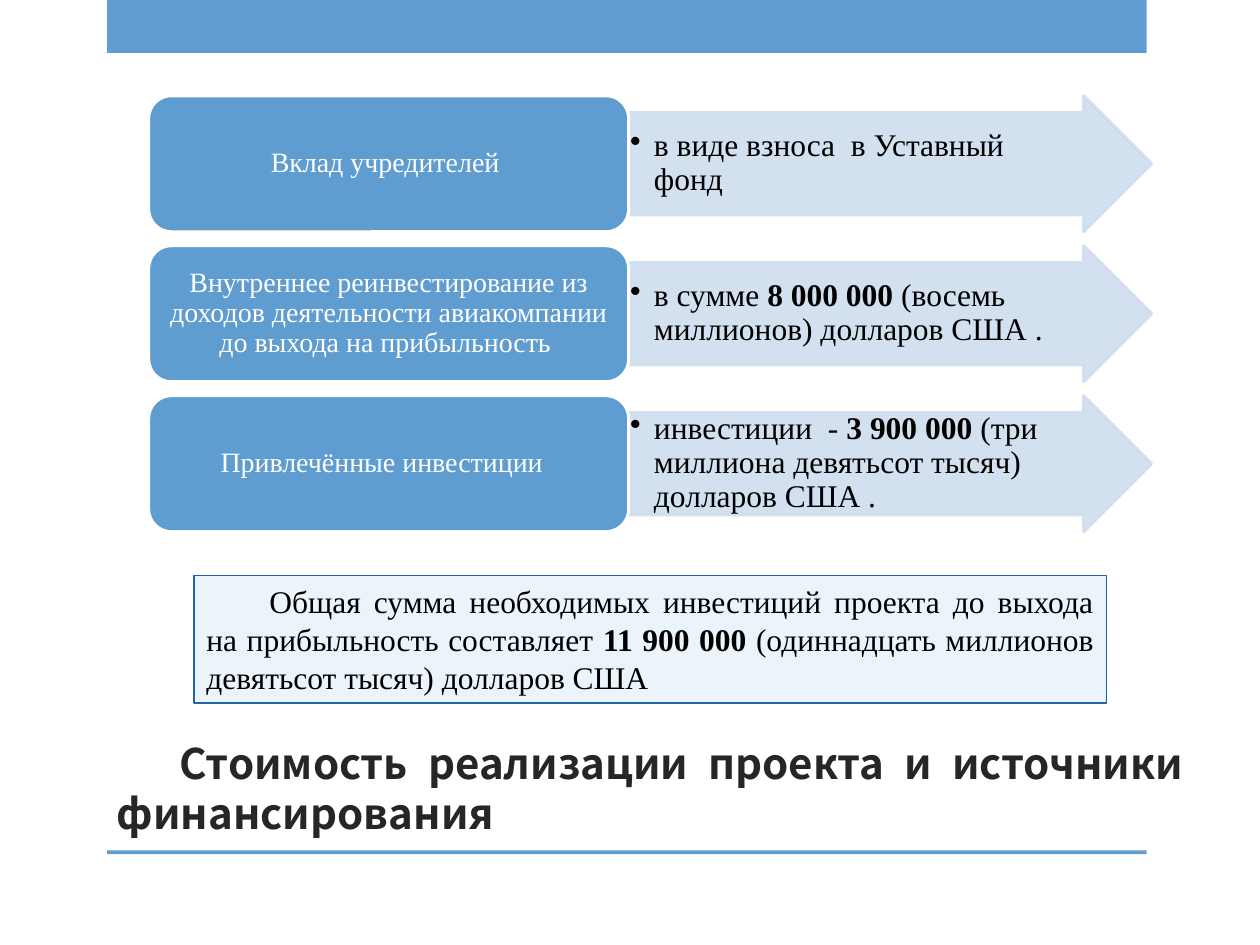
from pptx import Presentation
from pptx.dml.color import RGBColor
from pptx.enum.shapes import MSO_SHAPE
from pptx.enum.text import MSO_ANCHOR, PP_ALIGN
from pptx.oxml.ns import qn
from pptx.util import Inches, Pt
from lxml.etree import SubElement

SERIF = "Times New Roman"
SANS = "Noto Sans CJK KR"


def rgb(color):
    return RGBColor.from_string(color)


def set_alpha(fill_xml, percent):
    for clr in fill_xml.iter(qn("a:srgbClr")):
        SubElement(clr, qn("a:alpha"), val=str(percent * 1000))


class Deck:
    BLUE, BOX_BLUE, PALE = "629DD1", "5F9DD1", "CFDDEE"

    def __init__(self, slide):
        self.s = slide

    def shape(self, kind, box, fill, line=None, width=1.75, adj=()):
        sp = self.s.shapes.add_shape(kind, *map(Inches, box))
        sp.shadow.inherit = False
        for i, value in enumerate(adj):
            sp.adjustments[i] = value
        sp.fill.solid()
        sp.fill.fore_color.rgb = rgb(fill)
        if line:
            sp.line.color.rgb = rgb(line)
            sp.line.width = Pt(width)
        else:
            sp.line.fill.background()
        return sp

    def text(self, sp, parts, size, color="000000", font=SERIF, bold=False,
             align=PP_ALIGN.LEFT, anchor=MSO_ANCHOR.TOP,
             insets=(0.1, 0.05, 0.1, 0.05), spacing=None,
             margin=0, indent=0, bullet=None):
        """Write one paragraph; every second part is emphasised."""
        tf = sp.text_frame
        tf.word_wrap = True
        tf.vertical_anchor = anchor
        (tf.margin_left, tf.margin_top,
         tf.margin_right, tf.margin_bottom) = map(Inches, insets)
        p = tf.paragraphs[0]
        p.alignment = align
        if spacing:
            p.line_spacing = spacing
        pPr = p._p.get_or_add_pPr()
        pPr.set("marL", str(Inches(margin)))
        pPr.set("indent", str(Inches(indent)))
        if bullet:
            SubElement(pPr, qn("a:buChar"), char=bullet)
        for i, part in enumerate(parts):
            r = p.add_run()
            r.text = part
            r.font.name = font
            r.font.size = Pt(size)
            r.font.bold = bold or i % 2 == 1
            r.font.color.rgb = rgb(color)

    def title(self, box, text):
        sp = self.s.shapes.add_textbox(*map(Inches, box))
        self.text(sp, [text], 24, "262626", SANS, bold=True,
                  align=PP_ALIGN.JUSTIFY, indent=0.5)

    def arrow(self, box, parts):
        sp = self.shape(MSO_SHAPE.RIGHT_ARROW, box, self.PALE, self.PALE,
                        adj=(0.75, 0.5))
        set_alpha(sp._element.spPr, 90)
        # The wide right inset keeps the text out of the arrowhead
        self.text(sp, parts, 18, anchor=MSO_ANCHOR.MIDDLE,
                  insets=(0.01, 0.01, 0.28, 0.01), spacing=0.9,
                  margin=0.19, indent=-0.19, bullet="•")

    def source_box(self, box, label):
        sp = self.shape(MSO_SHAPE.ROUNDED_RECTANGLE, box, self.BOX_BLUE,
                        "FFFFFF", adj=(0.167,))
        self.text(sp, [label], 16, "FFFFFF", align=PP_ALIGN.CENTER,
                  anchor=MSO_ANCHOR.MIDDLE,
                  insets=(0.07, 0.03, 0.07, 0.03), spacing=0.9)

    def total_box(self, box, parts):
        sp = self.shape(MSO_SHAPE.RECTANGLE, box, "ECF4FB", "2164A9", 0.75)
        self.text(sp, parts, 18, align=PP_ALIGN.JUSTIFY, indent=0.5)


SOURCES = [
    ("Вклад учредителей ", ["в виде взноса  в Уставный фонд"]),
    ("Внутреннее реинвестирование из доходов деятельности авиакомпании "
     "до выхода на прибыльность ",
     ["в сумме ", "8 000 000", " (восемь миллионов) долларов США ."]),
    ("Привлечённые инвестиции  ",
     ["инвестиции  - ", "3 900 000",
      " (три миллиона девятьсот тысяч) долларов США ."]),
]


def main():
    prs = Presentation()
    prs.slide_width, prs.slide_height = Inches(10), Inches(7.5)
    deck = Deck(prs.slides.add_slide(prs.slide_layouts[6]))

    # Top band and bottom rule
    for top, height in ((0, 0.42), (6.75, 0.03)):
        deck.shape(MSO_SHAPE.RECTANGLE, (0.85, top, 8.25, height), deck.BLUE)

    # Title
    deck.title((0.83, 5.8, 8.66, 0.95),
               "Стоимость реализации проекта и источники финансирования")

    # Funding sources, one row each
    for i, (label, details) in enumerate(SOURCES):
        top = 0.76 + 1.19 * i
        deck.arrow((4.99, top, 4.15, 1.08), details)
        deck.source_box((1.18, top, 3.81, 1.08), label)

    # Total
    deck.total_box((1.54, 4.57, 7.24, 1.01), [
        "Общая сумма необходимых инвестиций проекта до выхода "
        "на прибыльность составляет ",
        "11 900 000 ",
        "(одиннадцать миллионов девятьсот тысяч) долларов США"])

    prs.save("out.pptx")


if __name__ == "__main__":
    main()
